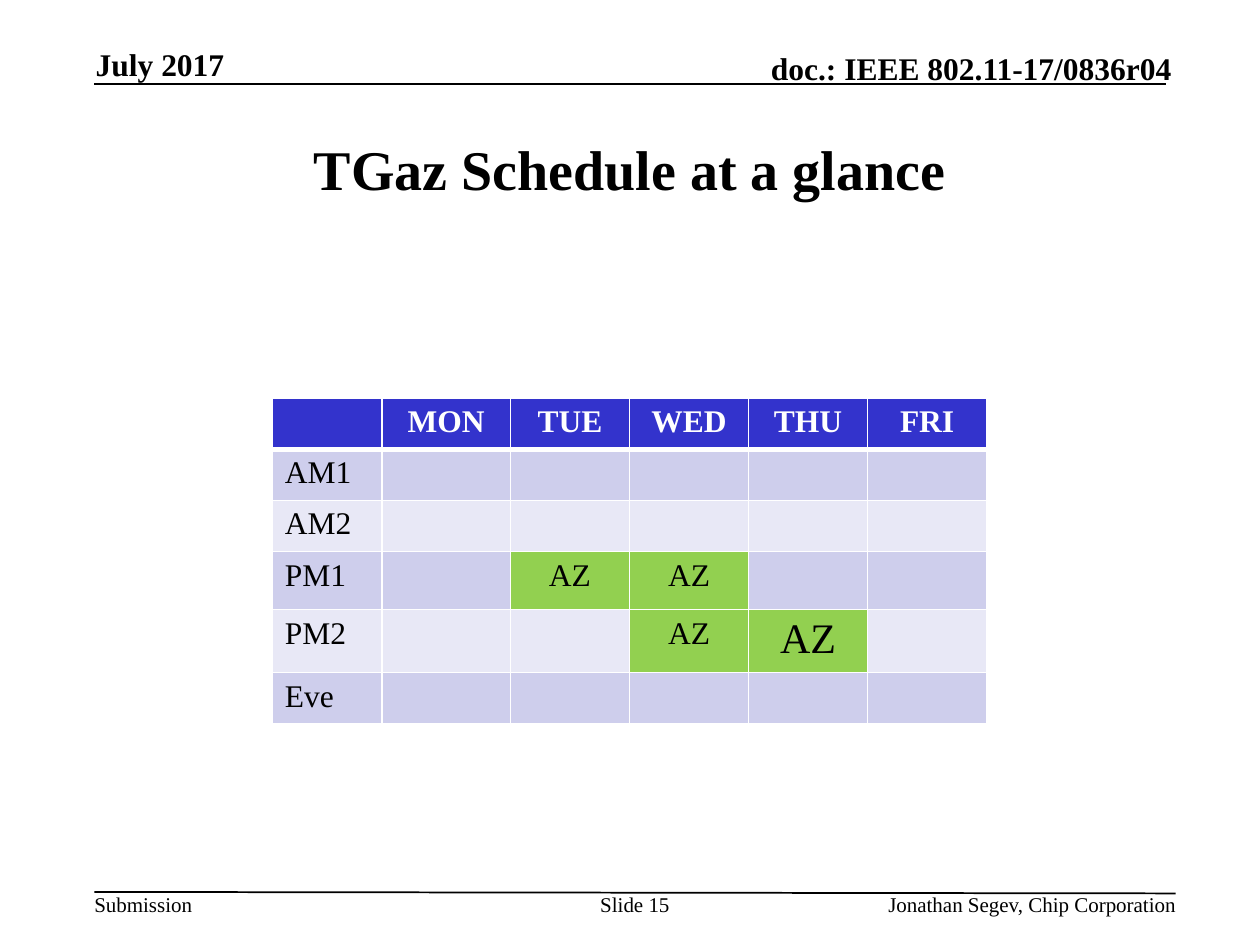
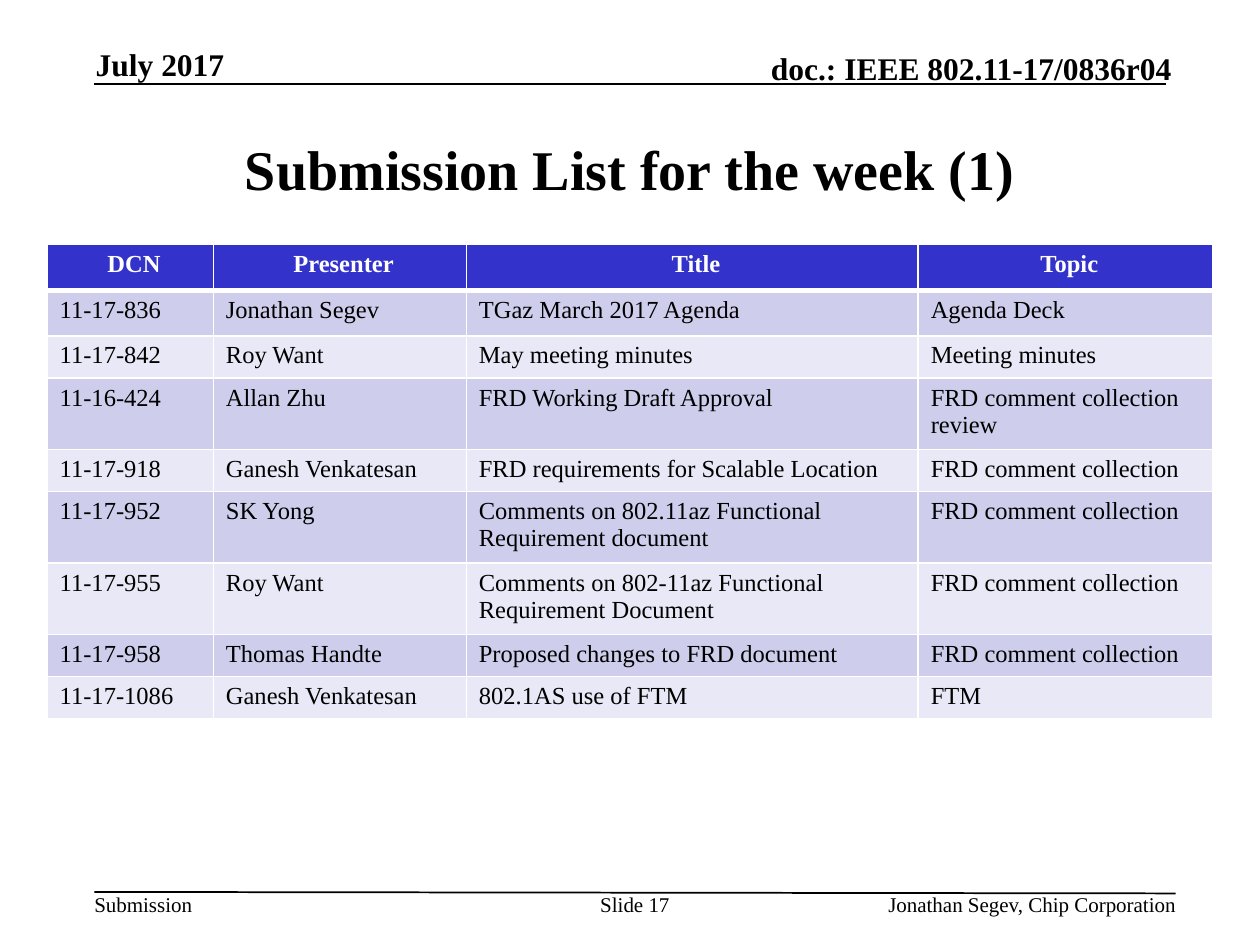
import pptx
import pptx.util
import pptx.dml.color
import pptx.enum.shapes
import pptx.enum.text
import pptx.oxml
import pptx.oxml.ns

Cm = pptx.util.Cm
Pt = pptx.util.Pt
ALIGN = pptx.enum.text.PP_ALIGN
ANCHOR = pptx.enum.text.MSO_ANCHOR

FONT = "Times New Roman"
COLORS = {
    "ink": "000000",
    "paper": "FFFFFF",
    "header": "3333CC",
    "odd": "CECEEC",
    "even": "E8E8F6",
    "meeting": "92D050",
}

SCHEDULE = [
    ["", "MON", "TUE", "WED", "THU", "FRI"],
    ["AM1", "", "", "", "", ""],
    ["AM2", "", "", "", "", ""],
    ["PM1", "", "AZ", "AZ", "", ""],
    ["PM2", "", "", "AZ", "AZ", ""],
    ["Eve", "", "", "", "", ""],
]

SUBMISSIONS = [
    ["DCN", "Presenter", "Title", "Topic"],
    ["11-17-836", "Jonathan Segev", "TGaz March 2017 Agenda", "Agenda Deck"],
    ["11-17-842", "Roy Want", "May meeting minutes", "Meeting minutes"],
    ["11-16-424", "Allan Zhu", "FRD Working Draft Approval",
     "FRD comment collection review"],
    ["11-17-918", "Ganesh Venkatesan", "FRD requirements for Scalable Location",
     "FRD comment collection"],
    ["11-17-952", "SK Yong",
     "Comments on 802.11az Functional Requirement document",
     "FRD comment collection"],
    ["11-17-955", "Roy Want",
     "Comments on 802-11az Functional Requirement Document",
     "FRD comment collection"],
    ["11-17-958", "Thomas Handte", "Proposed changes to FRD document",
     "FRD comment collection"],
    ["11-17-1086", "Ganesh Venkatesan", "802.1AS use of FTM", "FTM"],
]


def rgb(name):
    return pptx.dml.color.RGBColor.from_string(COLORS[name])


def write(tf, text, size=12, bold=False, color="ink", align=ALIGN.LEFT):
    p = tf.paragraphs[0]
    p.alignment = align
    r = p.add_run()
    r.text = text
    r.font.name = FONT
    r.font.size = Pt(size)
    r.font.bold = bold
    r.font.color.rgb = rgb(color)


def add_text(s, text, left, top, width, height, anchor=ANCHOR.TOP, wrap=True, **style):
    sp = s.shapes.add_textbox(Cm(left), Cm(top), Cm(width), Cm(height))
    tf = sp.text_frame
    tf.margin_left = tf.margin_right = tf.margin_top = tf.margin_bottom = 0
    tf.vertical_anchor = anchor
    tf.word_wrap = wrap
    write(tf, text, **style)


def add_rule(s, x1, y1, x2, y2):
    line = s.shapes.add_connector(
        pptx.enum.shapes.MSO_CONNECTOR.STRAIGHT, Cm(x1), Cm(y1), Cm(x2), Cm(y2))
    line.line.color.rgb = rgb("ink")
    line.line.width = Pt(1)
    line._element.spPr.append(pptx.oxml.parse_xml(
        f'<a:effectLst {pptx.oxml.ns.nsdecls("a")}/>'))


def set_borders(cell, top=1, bottom=1):
    tcPr = cell._tc.get_or_add_tcPr()
    widths = {"lnL": 1, "lnR": 1, "lnT": top, "lnB": bottom}
    for i, (tag, width) in enumerate(widths.items()):
        tcPr.insert(i, pptx.oxml.parse_xml(
            f'<a:{tag} {pptx.oxml.ns.nsdecls("a")} w="{Pt(width)}"><a:solidFill>'
            f'<a:srgbClr val="{COLORS["paper"]}"/></a:solidFill></a:{tag}>'))


def add_grid(s, rows, left, top, widths, heights, size, big_cells=()):
    table = s.shapes.add_table(
        len(rows), len(widths), Cm(left), Cm(top),
        Cm(sum(widths)), Cm(sum(heights))).table
    for col, width in zip(table.columns, widths):
        col.width = Cm(width)
    for row, height in zip(table.rows, heights):
        row.height = Cm(height)
    for i, row in enumerate(rows):
        for j, text in enumerate(row):
            cell = table.cell(i, j)
            header, meeting = i == 0, text == "AZ"
            fill = ("header" if header else "meeting" if meeting
                    else "odd" if i % 2 else "even")
            cell.fill.solid()
            cell.fill.fore_color.rgb = rgb(fill)
            set_borders(cell, top=3 if i == 1 else 1, bottom=3 if header else 1)
            if text:
                write(cell.text_frame, text, bold=header,
                      size=24 if (i, j) in big_cells else size,
                      color="paper" if header else "ink",
                      align=ALIGN.CENTER if header or meeting else ALIGN.LEFT)
    return table


def add_page(prs, title, number):
    s = prs.slides.add_slide(prs.slide_layouts[6])
    add_rule(s, 1.9, 1.7, 23.5, 1.7)
    add_rule(s, 1.9, 17.98, 23.7, 18.01)
    add_text(s, "July 2017", 1.93, 0.92, 5.2, 0.76,
             anchor=ANCHOR.BOTTOM, size=18, bold=True)
    add_text(s, "doc.: IEEE 802.11-17/0836r04", 13.89, 0.98, 9.73, 0.77,
             anchor=ANCHOR.BOTTOM, size=18, bold=True, align=ALIGN.RIGHT)
    add_text(s, title, 1.9, 1.9, 21.6, 2.96,
             anchor=ANCHOR.MIDDLE, size=32, bold=True, align=ALIGN.CENTER)
    add_text(s, "Submission", 1.9, 17.98, 1.98, 0.51, wrap=False)
    add_text(s, f"Slide {number}", 12.06, 17.98, 1.48, 1.01, align=ALIGN.CENTER)
    add_text(s, "Jonathan Segev, Chip Corporation", 14.88, 17.98, 8.83, 0.51,
             align=ALIGN.RIGHT)
    return s


def main():
    prs = pptx.Presentation()
    prs.slide_width, prs.slide_height = Cm(25.4), Cm(19.05)

    s = add_page(prs, "TGaz Schedule at a glance", 15)
    add_grid(s, SCHEDULE, 5.49, 8.03, [2.21, 2.59] + [2.4] * 4,
             [1.03, 1.03, 1.03, 1.17, 1.18, 1.03], 18, big_cells=[(4, 4)])

    s = add_page(prs, "Submission List for the week (1)", 17)
    table = add_grid(s, SUBMISSIONS, 0.95, 4.93, [3.35, 5.1, 9.11, 5.94],
                     [0.92, 0.92, 0.8, 1.35, 0.8, 1.35, 1.35, 0.8, 0.8], 14)
    for cell in table.rows[0].cells:
        cell.margin_right = Cm(0.1)

    prs.save("out.pptx")


if __name__ == "__main__":
    main()
